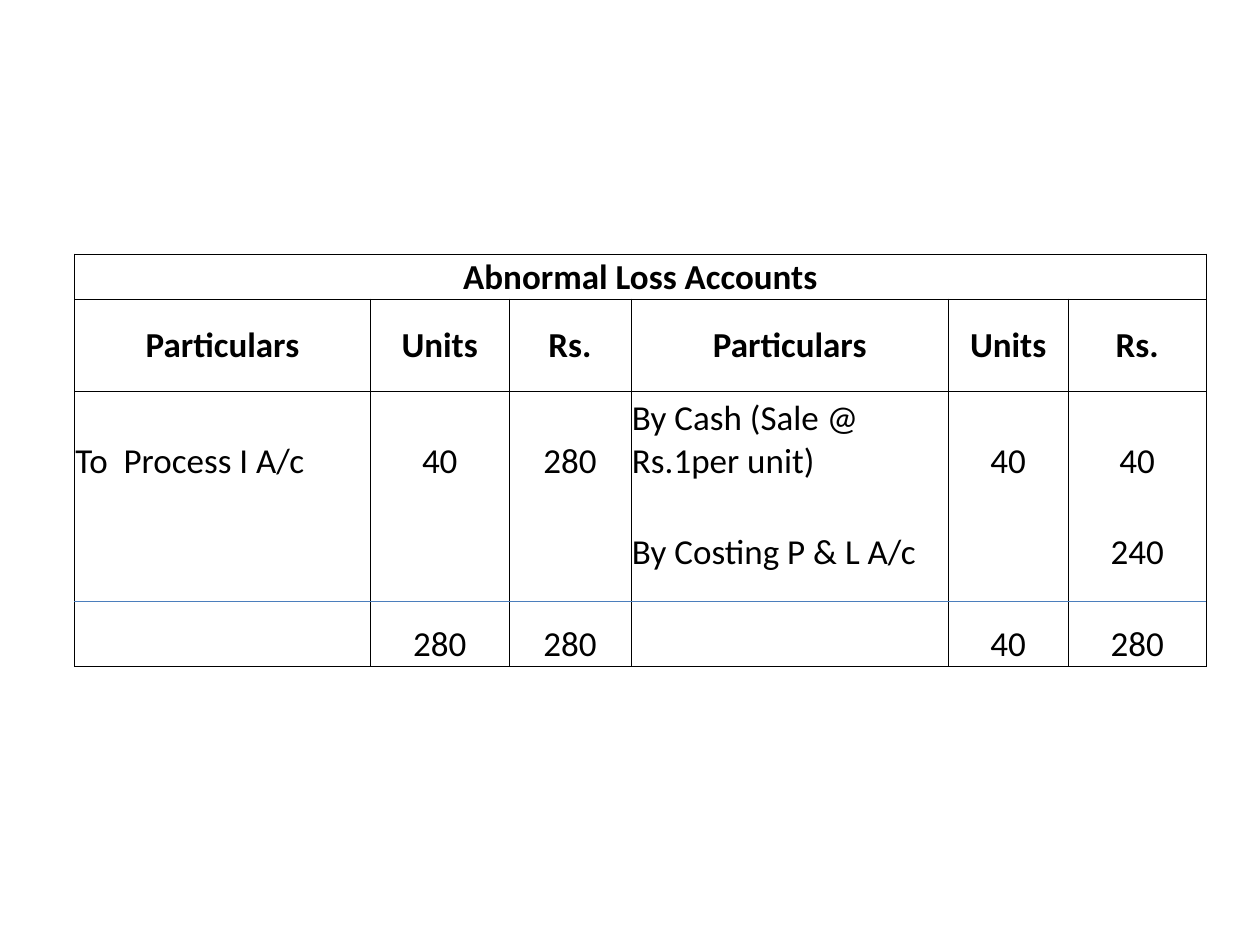
from lxml import etree
from pptx import Presentation
from pptx.dml.color import RGBColor
from pptx.enum.shapes import MSO_CONNECTOR
from pptx.enum.text import MSO_ANCHOR, PP_ALIGN
from pptx.oxml.ns import qn
from pptx.util import Cm, Pt

LEFT, CENTER = PP_ALIGN.LEFT, PP_ALIGN.CENTER
MIDDLE, BOTTOM = MSO_ANCHOR.MIDDLE, MSO_ANCHOR.BOTTOM
STRAIGHT = MSO_CONNECTOR.STRAIGHT
BLACK, BLUE = "000000", "4B7EBC"

X, Y = 1.5, 5.12
COLS = [5.97, 2.79, 2.46, 6.4, 2.41, 2.79]
ROWS = [0.91] + [1.85] * 4
HEAD = ["Particulars", "Units", "Rs."]
DATA = [
    ["Abnormal Loss Accounts", "", "", "", "", ""],
    HEAD * 2,
    ["To  Process I A/c", "40", "280", "By Cash (Sale @ Rs.1per unit)", "40", "40"],
    ["", "", "", "By Costing P & L A/c", "", "240"],
    ["", "280", "280", "", "40", "280"],
]
EDGES = ["LRTB", "LRTB", "LRT", "LR", "LRB"]


def color(code):
    return RGBColor.from_string(code)


def write(cell, text, size=20, bold=False, align=CENTER, anchor=BOTTOM):
    cell.margin_left = cell.margin_right = cell.margin_top = Cm(0.02)
    cell.margin_bottom = 0
    cell.vertical_anchor = anchor
    para = cell.text_frame.paragraphs[0]
    para.alignment = align
    para.font.size = Pt(size)
    if text:
        run = para.add_run()
        run.text = text
        font = run.font
        font.name, font.size, font.bold = "Calibri", Pt(size), bold
        font.color.rgb = color(BLACK)


def border(cell, edges):
    props = cell._tc.get_or_add_tcPr()
    for side in "LRTB":
        line = etree.SubElement(props, qn(f"a:ln{side}"), w=str(Pt(0.5)))
        if side in edges:
            fill = etree.SubElement(line, qn("a:solidFill"))
            etree.SubElement(fill, qn("a:srgbClr"), val=BLACK)
        else:
            etree.SubElement(line, qn("a:noFill"))
    cell.fill.background()


def add_grid(slide):
    frame = slide.shapes.add_table(
        len(ROWS), len(COLS), Cm(X), Cm(Y), Cm(sum(COLS)), Cm(sum(ROWS)))
    table = frame.table
    table.first_row = table.horz_banding = False
    for col, width in zip(table.columns, COLS):
        col.width = Cm(width)
    for row, height in zip(table.rows, ROWS):
        row.height = Cm(height)
    for r, texts in enumerate(DATA):
        head = r < 2
        for c, text in enumerate(texts):
            cell = table.cell(r, c)
            write(cell, text, bold=head,
                  align=LEFT if c % 3 == 0 and not head else CENTER,
                  anchor=MIDDLE if head else BOTTOM)
            border(cell, EDGES[r])
    table.cell(0, 0).merge(table.cell(0, len(COLS) - 1))


def add_rule(slide, y):
    rule = slide.shapes.add_connector(
        STRAIGHT, Cm(X), Cm(y), Cm(X + sum(COLS)), Cm(y))
    rule.line.color.rgb = color(BLUE)
    rule.line.width = Pt(0.75)
    etree.SubElement(rule._element.spPr, qn("a:effectLst"))


def main():
    deck = Presentation()
    deck.slide_width, deck.slide_height = Cm(25.4), Cm(19.05)
    slide = deck.slides.add_slide(deck.slide_layouts[6])
    add_grid(slide)
    add_rule(slide, 12.12)
    deck.save("out.pptx")


if __name__ == "__main__":
    main()
